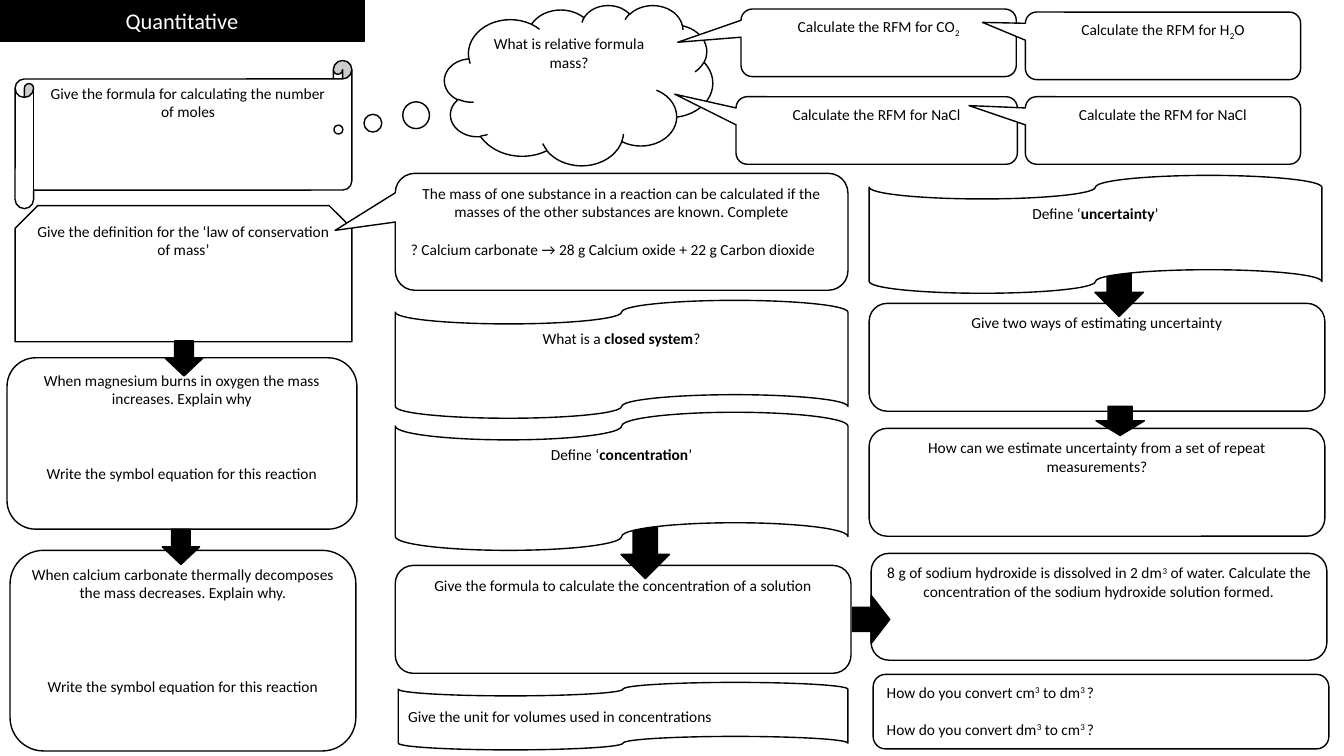
from pptx import Presentation
from pptx.dml.color import RGBColor
from pptx.enum.shapes import MSO_SHAPE as SHAPE
from pptx.enum.text import MSO_ANCHOR, PP_ALIGN
from pptx.util import Inches, Pt

COLORS = {"ink": "000000", "paper": "FFFFFF"}
FONT = "Calibri"
TEXT_SIZE, TITLE_SIZE = 11, 16
LINE_HEIGHT = 13.4  # points taken by one line of question text
BASELINES = {"sub": "-25000", "sup": "30000"}
LEFT, CENTER = PP_ALIGN.LEFT, PP_ALIGN.CENTER

# Columns and the sizes shared by several boxes
COL_1, COL_2, COL_3 = 0.15, 3.92, 8.62
CARD_W, CARD_H = 4.52, 1.07
TAPE_W = 4.49
RFM_W, RFM_H, RFM_RIGHT = 2.73, 0.67, 10.17

CUBED = ("3", "sup")
EQUATION = "Write the symbol equation for this reaction"

# A paragraph: (alignment, free lines above, runs); a run: text or (text, style)
TITLE = [(CENTER, 0, ["Quantitative"])]


def question(*runs):
    return [(CENTER, 0, runs)]


# (kind, (left, top, width, height), paragraphs, adjustments)
BOXES = [
    (SHAPE.ROUNDED_RECTANGLE, (COL_3, 3.01, CARD_W, CARD_H),
     question("Give two ways of estimating uncertainty"), ()),
    (SHAPE.HORIZONTAL_SCROLL, (COL_1, 0.6, 3.34, 1.47),
     question("Give the formula for calculating the number of moles"), ()),
    (SHAPE.CLOUD_CALLOUT, (4.41, 0.05, 2.66, 1.59),
     question("What is relative formula mass?"), (-0.896, 0.277)),
    (SHAPE.ROUNDED_RECTANGULAR_CALLOUT, (7.35, 0.09, RFM_W, RFM_H),
     question("Calculate the RFM for CO", ("2", "sub")), (-0.73, -0.008)),
    (SHAPE.ROUNDED_RECTANGULAR_CALLOUT, (RFM_RIGHT, 0.12, RFM_W, RFM_H),
     question("Calculate the RFM for H", ("2", "sub"), "O"), (-0.656, -0.347)),
    (SHAPE.ROUNDED_RECTANGULAR_CALLOUT, (7.3, 0.96, 2.79, RFM_H),
     question("Calculate the RFM for NaCl"), (-0.718, -0.538)),
    (SHAPE.ROUNDED_RECTANGULAR_CALLOUT, (RFM_RIGHT, 0.96, RFM_W, RFM_H),
     question("Calculate the RFM for NaCl"), (-0.705, -0.368)),
    (SHAPE.SNIP_2_SAME_RECTANGLE, (COL_1, 2.04, 3.34, 1.35),
     question("Give the definition for the ‘law of conservation of mass’"), ()),
    (SHAPE.ROUNDED_RECTANGLE, (0.07, 3.55, 3.47, 1.7),
     [(CENTER, 0, ["When magnesium burns in oxygen the mass increases. Explain why"]),
      (CENTER, 3, [EQUATION])], ()),
    (SHAPE.ROUNDED_RECTANGLE, (0.1, 5.46, 3.43, 1.99),
     [(CENTER, 0, ["When calcium carbonate thermally decomposes the mass decreases. "
                   "Explain why."]),
      (CENTER, 4, [EQUATION])], ()),
    (SHAPE.ROUNDED_RECTANGULAR_CALLOUT, (COL_2, 1.72, TAPE_W, 1.16),
     [(CENTER, 0, ["The mass of one substance in a reaction can be calculated if the "
                   "masses of the other substances are known. Complete"]),
      (LEFT, 1, ["? Calcium carbonate → 28 g Calcium oxide + 22 g Carbon dioxide"])],
     (-0.633, -0.012)),
    (SHAPE.ROUNDED_RECTANGLE, (COL_3, 4.25, CARD_W, CARD_H),
     question("How can we estimate uncertainty from a set of repeat measurements?"), ()),
    (SHAPE.ROUNDED_RECTANGLE, (COL_2, 5.61, CARD_W, CARD_H),
     question("Give the formula to calculate the concentration of a solution"), ()),
    (SHAPE.ROUNDED_RECTANGLE, (8.64, 5.49, CARD_W, 1.06),
     question("8 g of sodium hydroxide is dissolved in 2 dm", CUBED,
              " of water. Calculate the concentration of the sodium hydroxide "
              "solution formed."), ()),
    (SHAPE.ROUNDED_RECTANGLE, (8.66, 6.69, CARD_W, 0.74),
     [(LEFT, 0, ["How do you convert cm", CUBED, " to dm", CUBED, (" ", "sup"), "?"]),
      (LEFT, 1, ["How do you convert dm", CUBED, " to cm", CUBED, (" ", "sup"), "?"])],
     ()),
]

# ((left, top, width, height), rotation)
ARROWS = [
    ((1.64, 3.38, 0.37, 0.35), 0),
    ((1.61, 5.25, 0.37, 0.35), 0),
    ((10.86, 2.63, 0.48, 0.51), 0),
    ((10.87, 4.03, 0.48, 0.29), 0),
    ((6.16, 5.23, 0.48, 0.51), 0),
    ((8.4, 5.96, 0.48, 0.37), 270),
]

# Tapes lie over the arrows that leave them: (frame, paragraphs, anchor)
TAPES = [
    ((COL_2, 2.98, TAPE_W, 1.17),
     question("What is a ", ("closed system", "bold"), "?"), MSO_ANCHOR.TOP),
    ((COL_3, 1.74, TAPE_W, 1.17),
     question("Define ‘", ("uncertainty", "bold"), "’"), MSO_ANCHOR.TOP),
    ((COL_2, 4.09, TAPE_W, 1.37),
     question("Define ‘", ("concentration", "bold"), "’"), MSO_ANCHOR.TOP),
    ((3.95, 6.77, 4.46, 0.67),
     [(LEFT, 0, ["Give the unit for volumes used in concentrations"])],
     MSO_ANCHOR.MIDDLE),
]


def rgb(name):
    return RGBColor.from_string(COLORS[name])


def add_figure(slide, kind, frame, fill="paper", adjustments=()):
    figure = slide.shapes.add_shape(kind, *map(Inches, frame))
    figure.shadow.inherit = False
    figure.fill.solid()
    figure.fill.fore_color.rgb = rgb(fill)
    figure.line.color.rgb = rgb("ink")
    figure.line.width = Pt(1)
    for index, value in enumerate(adjustments):
        figure.adjustments[index] = value
    return figure


def write(figure, paragraphs, anchor=MSO_ANCHOR.TOP, size=TEXT_SIZE, color="ink"):
    frame = figure.text_frame
    frame.word_wrap = True
    frame.vertical_anchor = anchor
    for index, (alignment, free_lines, runs) in enumerate(paragraphs):
        paragraph = frame.add_paragraph() if index else frame.paragraphs[0]
        paragraph.alignment = alignment
        paragraph.space_before = Pt(free_lines * LINE_HEIGHT)
        for item in runs:
            text, style = (item, None) if isinstance(item, str) else item
            run = paragraph.add_run()
            run.text = text
            look = {"name": FONT, "size": Pt(size), "bold": style == "bold"}
            for attribute, value in look.items():
                setattr(run.font, attribute, value)
            run.font.color.rgb = rgb(color)
            if style in BASELINES:
                run._r.get_or_add_rPr().set("baseline", BASELINES[style])


def main():
    deck = Presentation()
    deck.slide_width, deck.slide_height = Inches(13.33), Inches(7.5)
    slide = deck.slides.add_slide(deck.slide_layouts[6])

    banner = add_figure(slide, SHAPE.RECTANGLE, (0, 0, 3.61, 0.41), "ink")
    write(banner, TITLE, MSO_ANCHOR.MIDDLE, TITLE_SIZE, "paper")
    for kind, frame, paragraphs, adjustments in BOXES:
        write(add_figure(slide, kind, frame, adjustments=adjustments), paragraphs)
    for frame, rotation in ARROWS:
        add_figure(slide, SHAPE.DOWN_ARROW, frame, "ink").rotation = rotation
    for frame, paragraphs, anchor in TAPES:
        write(add_figure(slide, SHAPE.FLOWCHART_PUNCHED_TAPE, frame), paragraphs, anchor)

    deck.save("out.pptx")


if __name__ == "__main__":
    main()
